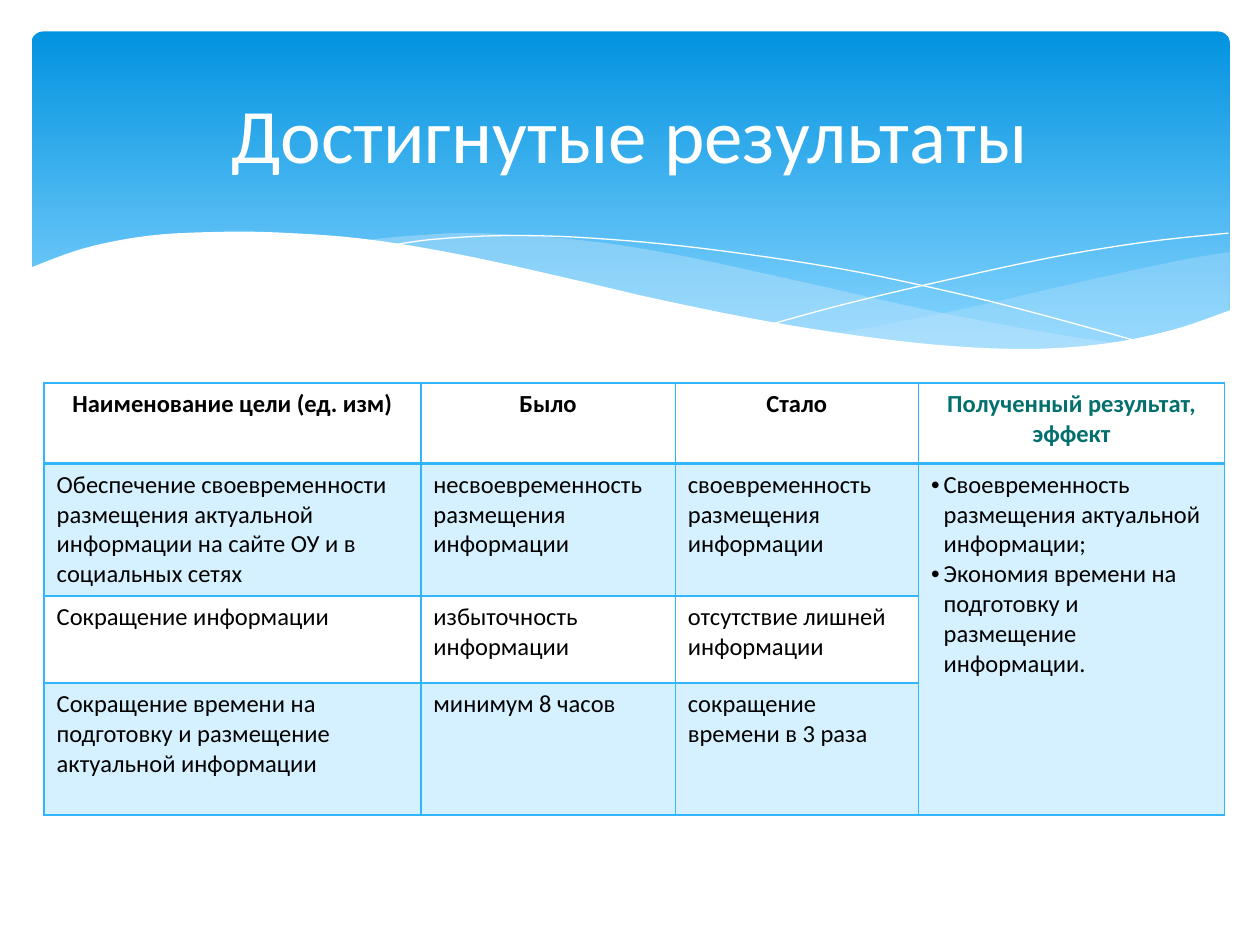
from lxml.etree import SubElement
from pptx import Presentation
from pptx.dml.color import RGBColor
from pptx.enum.shapes import MSO_SHAPE
from pptx.enum.text import MSO_ANCHOR, PP_ALIGN
from pptx.oxml import parse_xml
from pptx.oxml.ns import nsdecls, qn
from pptx.util import Inches, Pt

COLORS = {
    "white": "FFFFFF", "black": "000000", "accent": "31B6FD", "teal": "03706E",
    "sky_top": "0293E0", "sky_bottom": "83D3FE", "wave": "C6E7FC",
}
FONT = "Calibri"
TITLE = "Достигнутые результаты"
HEADERS = ["Наименование цели (ед. изм)", "Было", "Стало", "Полученный результат, эффект"]
GOALS = [
    ("Обеспечение своевременности размещения актуальной информации на сайте ОУ и в социальных сетях",
     "несвоевременность размещения информации", "своевременность размещения информации"),
    ("Сокращение информации", "избыточность информации", "отсутствие лишней информации"),
    ("Сокращение времени на подготовку и размещение актуальной информации",
     "минимум 8 часов", "сокращение времени в 3 раза"),
]
EFFECTS = [
    "Своевременность размещения актуальной информации;",
    "Экономия времени на подготовку и размещение информации.",
]
COLUMN_WIDTHS = [2.99, 2.02, 1.93, 2.43]
ROW_HEIGHTS = [0.64, 1.05, 0.69, 1.05]

RIGHT_WAVE = [
    [(9.76, 2), (9.35, 2.07), (8.61, 2.23), (7.79, 2.42), (7.06, 2.57), (6.61, 2.65)],
    [(6.61, 2.65), (7.05, 2.71), (7.57, 2.76), (8.14, 2.78), (8.72, 2.74), (9.28, 2.63), (9.76, 2.47)],
]
MIDDLE_WAVE = [
    [(8.93, 2.73), (8.37, 2.65), (7.41, 2.47), (6.29, 2.22), (5.41, 2.03), (4.65, 1.91),
     (3.8, 1.85), (3.28, 1.87), (2.86, 1.91)],
    [(2.86, 1.91), (3.62, 2.03), (4.49, 2.22), (5.3, 2.4), (6.18, 2.58), (6.95, 2.7),
     (7.61, 2.77), (8.28, 2.78), (8.93, 2.73)],
]
FALLING_LINE = [[(3.09, 1.95), (3.44, 1.9), (4.01, 1.87), (4.69, 1.89), (5.56, 1.97),
                 (6.65, 2.13), (7.6, 2.33), (8.31, 2.51), (9.07, 2.72)]]
RISING_LINE = [[(6.13, 2.57), (6.72, 2.41), (7.48, 2.23), (8.36, 2.04), (9.1, 1.92), (9.75, 1.85)]]
FRONT_WAVE = [
    [(9.77, 2.46), (9.3, 2.62), (8.75, 2.73), (8.09, 2.77), (7.26, 2.72), (6.26, 2.58),
     (5.29, 2.39), (4.47, 2.2), (3.65, 2.02), (2.92, 1.9), (2.3, 1.85), (1.77, 1.84),
     (1.19, 1.87), (0.67, 1.97), (0.23, 2.13)],
    [(0.23, 3.29), (9.77, 3.29)],
]


def rgb(name):
    return RGBColor.from_string(COLORS[name])


def set_fill(fill, color, percent=100):
    fill.solid()
    fill.fore_color.rgb = rgb(color)
    if percent < 100:
        color_element = fill._xPr.find(qn("a:solidFill"))[0]
        SubElement(color_element, qn("a:alpha"), val=str(percent * 1000))


def smooth(points, steps=6):
    padded = [points[0], *points, points[-1]]
    result = [points[0]]
    for a, b, c, d in zip(padded, padded[1:], padded[2:], padded[3:]):
        for step in range(1, steps + 1):
            t = step / steps
            result.append(tuple(
                q + 0.5 * t * (r - p + t * (2 * p - 5 * q + 4 * r - s + t * (3 * (q - r) + s - p)))
                for p, q, r, s in zip(a, b, c, d)))
    return result


def add_curve(slide, edges, closed):
    points = [(Inches(x), Inches(y)) for edge in edges
              for x, y in (smooth(edge) if len(edge) > 2 else edge)]
    builder = slide.shapes.build_freeform(*points[0])
    builder.add_line_segments(points[1:], close=closed)
    shape = builder.convert_to_shape()
    shape.shadow.inherit = False
    return shape


def add_wave(slide, edges, color, percent=100):
    shape = add_curve(slide, edges, True)
    set_fill(shape.fill, color, percent)
    shape.line.fill.background()


def add_thin_line(slide, edges):
    shape = add_curve(slide, edges, False)
    shape.fill.background()
    shape.line.color.rgb = rgb("white")
    shape.line.width = Pt(0)


def add_banner(slide):
    banner = slide.shapes.add_shape(MSO_SHAPE.ROUNDED_RECTANGLE, Inches(0.25), Inches(0.25),
                                    Inches(9.51), Inches(2.7))
    banner.adjustments[0] = 0.034
    banner.shadow.inherit = False
    banner.line.fill.background()
    banner.fill.gradient()
    banner.fill.gradient_angle = 270
    stops = [(0, "sky_top"), (0.9, "sky_bottom")]
    for stop, (position, color) in zip(banner.fill.gradient_stops, stops):
        stop.position = position
        stop.color.rgb = rgb(color)


def write(paragraph, text, size, color, bold=False, align=PP_ALIGN.LEFT):
    paragraph.alignment = align
    run = paragraph.add_run()
    run.text = text
    run.font.name = FONT
    run.font.size = Pt(size)
    run.font.bold = bold
    run.font.color.rgb = rgb(color)


def add_bullet(paragraph):
    properties = paragraph._p.get_or_add_pPr()
    properties.set("marL", str(Inches(0.1)))
    properties.set("indent", str(-Inches(0.1)))
    SubElement(properties, qn("a:buFont"), typeface="Arial")
    SubElement(properties, qn("a:buChar"), char="•")


def set_borders(cell, widths):
    properties = cell._tc.get_or_add_tcPr()
    for index, (side, width) in enumerate(widths.items()):
        properties.insert(index, parse_xml(
            f'<a:ln{side} {nsdecls("a")} w="{Pt(width)}"><a:solidFill>'
            f'<a:srgbClr val="{COLORS["accent"]}"/></a:solidFill></a:ln{side}>'))


def add_results_table(slide):
    table = slide.shapes.add_table(
        len(ROW_HEIGHTS), len(COLUMN_WIDTHS), Inches(0.35), Inches(3.04),
        Inches(sum(COLUMN_WIDTHS)), Inches(sum(ROW_HEIGHTS))).table
    for column, width in zip(table.columns, COLUMN_WIDTHS):
        column.width = Inches(width)
    for row, height in zip(table.rows, ROW_HEIGHTS):
        row.height = Inches(height)
    last = len(COLUMN_WIDTHS) - 1
    for row_index, row in enumerate(table.rows):
        for column_index, cell in enumerate(row.cells):
            if row_index % 2 or (row_index and column_index == last):
                set_fill(cell.fill, "accent", 20)
            else:
                cell.fill.background()
            set_borders(cell, {"L": 1, "R": 1, "T": 2 if row_index == 1 else 1,
                               "B": 2 if row_index == 0 else 1})
    for index, text in enumerate(HEADERS):
        write(table.cell(0, index).text_frame.paragraphs[0], text, 14,
              "teal" if index == last else "black", True, PP_ALIGN.CENTER)
    for row_index, goal in enumerate(GOALS, 1):
        for column_index, text in enumerate(goal):
            write(table.cell(row_index, column_index).text_frame.paragraphs[0], text, 14, "black")
    effect_cell = table.cell(1, last)
    effect_cell.merge(table.cell(len(GOALS), last))
    frame = effect_cell.text_frame
    for index, text in enumerate(EFFECTS):
        paragraph = frame.add_paragraph() if index else frame.paragraphs[0]
        write(paragraph, text, 14, "black")
        add_bullet(paragraph)


def add_title(slide):
    title = slide.shapes.title
    slide.shapes.element.append(title.element)
    title.left, title.top, title.width, title.height = map(Inches, (0.5, 0.37, 9, 1.37))
    title.text_frame.vertical_anchor = MSO_ANCHOR.MIDDLE
    write(title.text_frame.paragraphs[0], TITLE, 44, "white", align=PP_ALIGN.CENTER)


def main():
    presentation = Presentation()
    presentation.slide_width, presentation.slide_height = Inches(10), Inches(7.5)
    slide = presentation.slides.add_slide(presentation.slide_layouts[5])
    add_banner(slide)
    add_wave(slide, RIGHT_WAVE, "wave", 29)
    add_wave(slide, MIDDLE_WAVE, "wave", 40)
    add_thin_line(slide, FALLING_LINE)
    add_thin_line(slide, RISING_LINE)
    add_wave(slide, FRONT_WAVE, "white")
    add_title(slide)
    add_results_table(slide)
    presentation.save("out.pptx")


if __name__ == "__main__":
    main()
